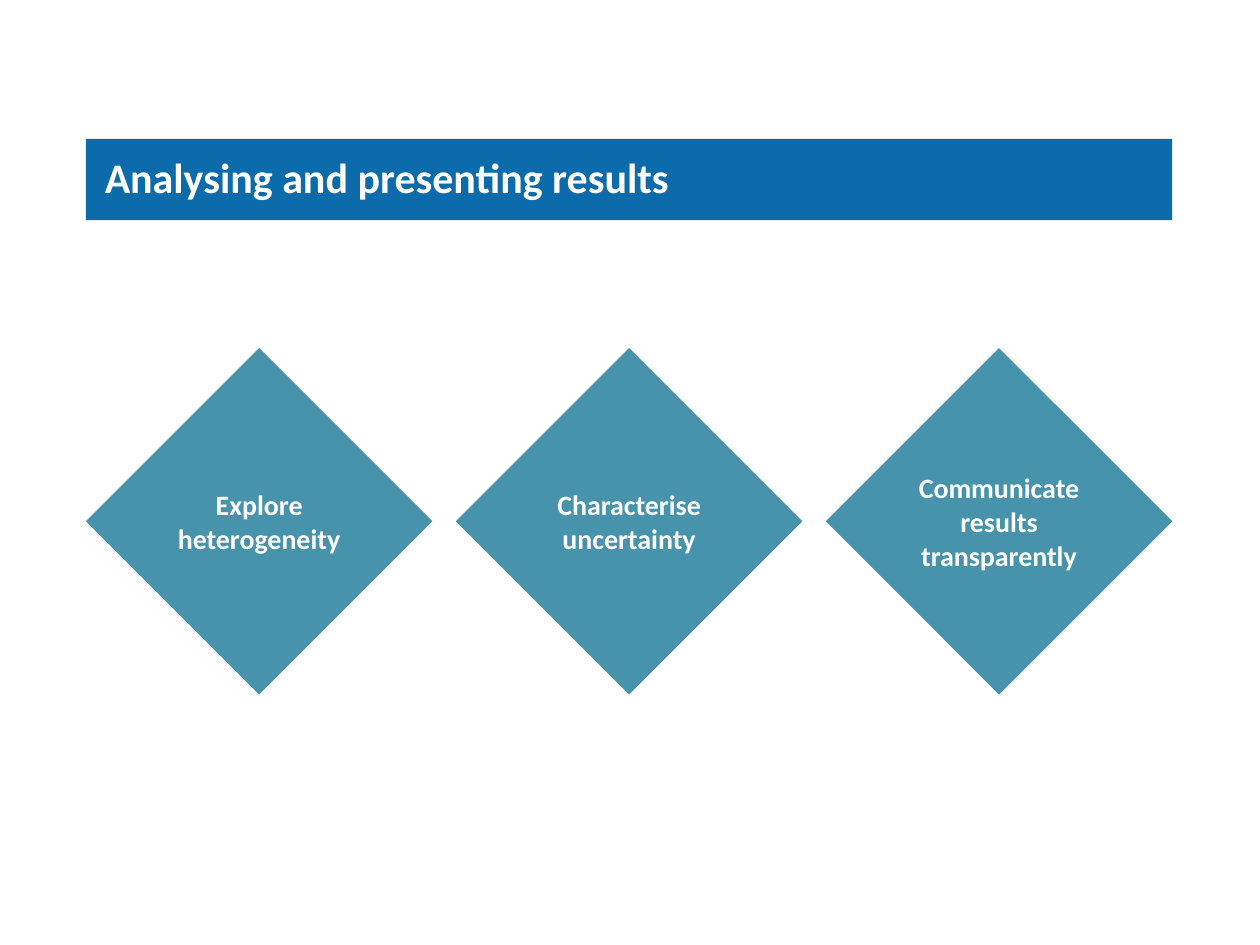
import pptx
import pptx.dml.color
import pptx.enum.shapes
import pptx.enum.text
import pptx.util

Pt = pptx.util.Pt
SHAPE = pptx.enum.shapes.MSO_SHAPE
ALIGN = pptx.enum.text.PP_ALIGN
BLUE = pptx.dml.color.RGBColor(0x0C, 0x6B, 0xAB)
TEAL = pptx.dml.color.RGBColor(0x46, 0x93, 0xAB)
WHITE = pptx.dml.color.RGBColor(0xFF, 0xFF, 0xFF)

LEFT, WIDTH = 49.1, 620.8
DIAMOND = 198

prs = pptx.Presentation()
prs.slide_width, prs.slide_height = Pt(720), Pt(540)
s = prs.slides.add_slide(prs.slide_layouts[6])


def add_label(kind, box, fill, text, size, align, insets, wrap):
    sp = s.shapes.add_shape(kind, *[Pt(v) for v in box])
    sp.shadow.inherit = False
    sp.fill.solid()
    sp.fill.fore_color.rgb = fill
    sp.line.fill.background()
    tf = sp.text_frame
    tf.word_wrap = wrap
    tf.vertical_anchor = pptx.enum.text.MSO_ANCHOR.MIDDLE
    tf.margin_left, tf.margin_top, tf.margin_right, tf.margin_bottom = [Pt(v) for v in insets]
    p = tf.paragraphs[0]
    p.alignment = align
    r = p.add_run()
    r.text = text
    r.font.name = "Calibri"
    r.font.size = Pt(size)
    r.font.bold = True
    r.font.color.rgb = WHITE
    return p


# Title bar
p = add_label(SHAPE.RECTANGLE, (LEFT, 79.4, WIDTH, 46.5), BLUE,
              "Analysing and presenting results", 24, ALIGN.LEFT,
              (10.8, 7.2, 7.2, 7.2), False)
p.line_spacing = 0.9

# Diamonds, spread evenly across the width of the bar
topics = ["Explore heterogeneity", "Characterise uncertainty",
          "Communicate results transparently"]
step = (WIDTH - DIAMOND) / (len(topics) - 1)
for i, topic in enumerate(topics):
    add_label(SHAPE.DIAMOND, (LEFT + i * step, 198.9, DIAMOND, DIAMOND), TEAL,
              topic, 16, ALIGN.CENTER, (0, 0, 0, 0), True)

prs.save("out.pptx")
